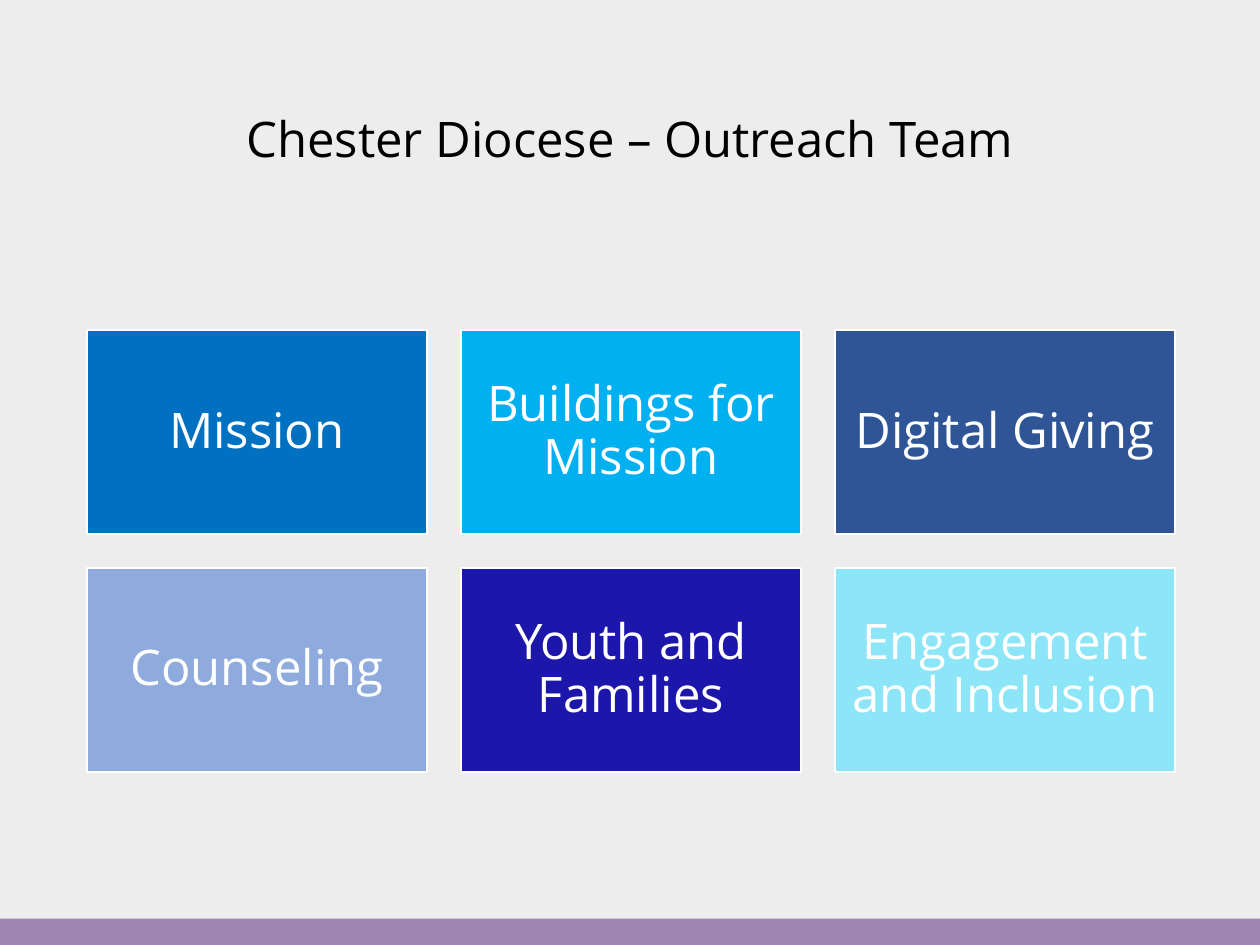
import pptx
import pptx.dml.color
import pptx.enum.shapes
import pptx.enum.text
import pptx.util
from pptx.util import Cm

COLOURS = {
    "background": "EDEDED",
    "footer": "9F85B1",
    "title": "000000",
    "white": "FFFFFF",
    "mission": "0070C0",
    "buildings": "00B0F0",
    "giving": "2F5597",
    "counseling": "8FAADC",
    "youth": "1D16AA",
    "inclusion": "8CE6F8",
}

TEAMS = [
    ("Mission", "mission"),
    ("Buildings for Mission", "buildings"),
    ("Digital Giving", "giving"),
    ("Counseling", "counseling"),
    ("Youth and Families", "youth"),
    ("Engagement and Inclusion", "inclusion"),
]


def colour(name):
    return pptx.dml.color.RGBColor.from_string(COLOURS[name])


class TeamPage:
    font_name = "Open Sans"
    font_size = pptx.util.Pt(28)

    def __init__(self, deck):
        self.page = deck.slides.add_slide(deck.slide_layouts[5])
        fill = self.page.background.fill
        fill.solid()
        fill.fore_color.rgb = colour("background")

    def set_text(self, shape, text, text_colour):
        frame = shape.text_frame
        frame.text = text
        frame.word_wrap = True
        frame.vertical_anchor = pptx.enum.text.MSO_ANCHOR.MIDDLE
        para = frame.paragraphs[0]
        para.alignment = pptx.enum.text.PP_ALIGN.CENTER
        para.line_spacing = 0.9
        for span in para.runs:
            span.font.name = self.font_name
            span.font.size = self.font_size
            span.font.color.rgb = colour(text_colour)

    def title(self, text, left, top, width, height):
        title = self.page.shapes.title
        title.left, title.top = Cm(left), Cm(top)
        title.width, title.height = Cm(width), Cm(height)
        self.set_text(title, text, "title")

    def block(self, fill_colour, left, top, width, height):
        block = self.page.shapes.add_shape(
            pptx.enum.shapes.MSO_SHAPE.RECTANGLE,
            Cm(left), Cm(top), Cm(width), Cm(height))
        block.shadow.inherit = False
        block.fill.solid()
        block.fill.fore_color.rgb = colour(fill_colour)
        block.line.fill.background()
        return block

    def card(self, text, fill_colour, left, top, width, height):
        card = self.block(fill_colour, left, top, width, height)
        card.line.color.rgb = colour("white")
        card.line.width = pptx.util.Pt(1)
        frame = card.text_frame
        frame.margin_left = frame.margin_right = Cm(0.3)
        frame.margin_top = frame.margin_bottom = Cm(0.3)
        self.set_text(card, text, "white")


def main():
    deck = pptx.Presentation()
    deck.slide_width, deck.slide_height = Cm(25.4), Cm(19.05)
    page = TeamPage(deck)

    # Footer band and title
    page.block("footer", 0, 18.52, 25.4, 0.53)
    page.title("Chester Diocese – Outreach Team", 1.75, 1.02, 21.9, 3.68)

    # Team cards, three to a row
    width, height, gap = 6.86, 4.11, 0.68
    for index, (text, fill_colour) in enumerate(TEAMS):
        row, column = divmod(index, 3)
        page.card(text, fill_colour, 1.75 + column * (width + gap),
                  6.66 + row * (height + gap), width, height)

    deck.save("out.pptx")


if __name__ == "__main__":
    main()
